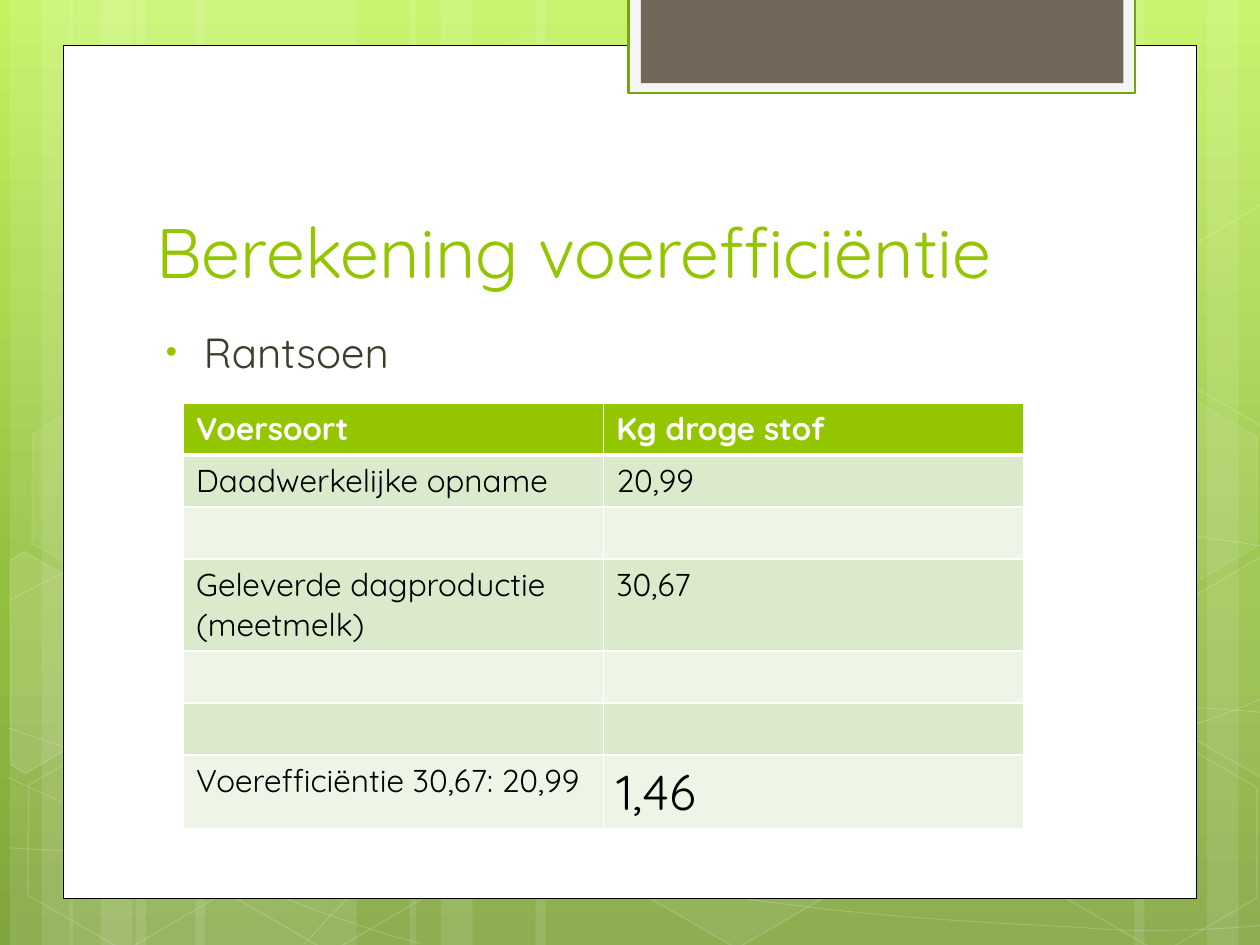
from copy import deepcopy

from lxml.etree import SubElement
from pptx import Presentation
from pptx.dml.color import RGBColor
from pptx.enum.shapes import MSO_SHAPE
from pptx.enum.text import MSO_ANCHOR, MSO_AUTO_SIZE, PP_ALIGN
from pptx.oxml.ns import qn
from pptx.util import Cm, Pt

FONT = "Quicksand"
WHITE = RGBColor(0xFF, 0xFF, 0xFF)
BLACK = RGBColor(0x00, 0x00, 0x00)
GREEN = RGBColor(0x94, 0xC6, 0x00)
DARK_GREEN = RGBColor(0x74, 0xA5, 0x10)
OLIVE = RGBColor(0x3E, 0x3D, 0x2D)
TAUPE = RGBColor(0x71, 0x68, 0x5A)
PALE_GREY = RGBColor(0xF5, 0xF5, 0xF5)
BAND_DARK = RGBColor(0xDC, 0xEA, 0xCC)
BAND_LIGHT = RGBColor(0xEE, 0xF5, 0xE7)
BACKGROUND_STOPS = [
    (0, RGBColor(0xC3, 0xF3, 0x5F)),
    (0.62, RGBColor(0x93, 0xBF, 0x3F)),
    (1, RGBColor(0x81, 0xA5, 0x3E)),
]

TITLE = "Berekening voerefficiëntie"
BULLET = "Rantsoen"
RESULT = "1,46"
ROWS = [
    ("Voersoort", "Kg droge stof"),
    ("Daadwerkelijke opname", "20,99"),
    ("", ""),
    ("Geleverde dagproductie (meetmelk)", "30,67"),
    ("", ""),
    ("", ""),
    ("Voerefficiëntie 30,67: 20,99", RESULT),
]

# All positions below are in centimetres.
SLIDE_WIDTH, SLIDE_HEIGHT = 25.4, 19.05
STRIPES = [  # left, width
    (2.74, 4.45), (0.2, 1.27), (0.84, 2.11), (3.94, 4.45), (1.4, 1.27), (2.03, 2.11),
    (18.62, 4.45), (24.33, 1.27), (22.86, 2.11), (10.8, 7.82), (8.26, 1.27), (8.89, 2.11),
]
HEXAGONS = [  # left, top, fill opacity, line opacity in percent
    (8.48, 0.91, 4, 8), (12.62, 14.96, 6, 12), (0.28, 15.01, 0, 12), (0.36, 7.92, 7, 8),
    (4.42, 15.04, 0, 12), (19.13, 11.51, 10, 12), (21.18, 15.06, 0, 12), (21.18, 7.98, 7, 8),
]
HEXAGON_TILT = 30
LEFT_CUT = [(0, 0.3), (0.15, 0), (2.41, 0), (3.5, 1.95), (2.41, 3.86), (2.06, 3.86)]
RIGHT_CUT = [(0, 1.93), (1.08, 0), (1.32, 0), (3.45, 3.68), (3.35, 3.86), (1.12, 3.86)]
CUT_HEXAGONS = [  # left, top, outline before tilting, fill opacity
    (-0.84, 11.66, LEFT_CUT, 10),
    (23.29, 11.28, RIGHT_CUT, 4),
    (23.29, 4.19, RIGHT_CUT, 0),
]
CURVES = [  # start point, then three Bézier points per segment
    [(0.18, 17.09), (1.55, 17.17), (2.92, 17.25), (4.83, 17.22), (6.73, 17.2), (9.09, 17.15),
     (11.63, 16.89), (14.17, 16.64), (17.78, 16.15), (20.12, 15.67), (22.43, 15.19),
     (24.82, 14.43), (25.58, 14)],
    [(0.18, 12.12), (0.91, 11.71), (1.65, 11.33), (3.07, 10.95), (4.52, 10.57), (6.58, 10.01),
     (8.81, 9.83), (11.07, 9.65), (13.82, 9.63), (16.61, 9.83), (19.41, 10.03),
     (24.05, 10.82), (25.58, 11.02)],
    [(0.15, 15.67), (3.23, 17.07), (6.27, 18.47), (8.48, 19.02)],
    [(0.18, 14.68), (0.97, 14.96), (1.78, 15.24), (3.25, 15.65), (4.72, 16.03), (6.93, 16.66),
     (9.07, 17.09), (11.18, 17.53), (13.84, 17.98), (15.95, 18.24), (18.06, 18.52),
     (20.32, 18.62), (21.67, 18.69), (22.99, 18.8), (23.34, 18.75), (24, 18.75),
     (24.66, 18.72), (25.12, 18.69), (25.58, 18.64)],
    [(6.15, 19.02), (6.6, 18.52), (7.06, 18.01), (7.67, 17.55), (8.28, 17.09), (9.14, 16.59),
     (9.86, 16.23), (10.57, 15.88), (11, 15.72), (11.94, 15.47), (12.85, 15.21),
     (14.55, 14.86), (15.44, 14.68), (16.36, 14.5), (16.48, 14.5), (17.27, 14.45),
     (18.06, 14.38), (19.3, 14.3), (20.17, 14.27), (21.06, 14.25), (22.5, 14.27),
     (22.5, 14.27), (23.07, 14.27), (23.64, 14.27), (24.21, 14.27), (24.66, 14.3),
     (25.1, 14.33), (25.32, 14.35), (25.55, 14.38), (25.48, 14.35), (25.55, 14.38)],
]
FRAMES = [  # box, fill, line colour, line width
    ((1.27, 0.91, 22.86, 17.2), WHITE, BLACK, 0.5),
    ((12.67, -0.05, 10.21, 1.93), PALE_GREY, DARK_GREEN, 1.25),
    ((12.92, -0.05, 9.73, 1.73), TAUPE, None, 0),
]
TITLE_BOX = (2.9, 2.84, 19.5, 3.18)
BODY_BOX = (2.88, 6.45, 18.82, 9.75)
TABLE_LEFT, TABLE_TOP, COLUMN_WIDTH = 3.7, 8.12, 8.47
TEXT_ROW_HEIGHT, EMPTY_ROW_HEIGHT = 1.04, 1.05


def set_opacity(solid_fill, percent):
    if percent < 100:
        SubElement(solid_fill[0], qn("a:alpha"), val=str(percent * 1000))


def paint(shape, fill=None, fill_opacity=100, line=None, line_width=0, line_opacity=100):
    shape.shadow.inherit = False
    properties = shape.element.spPr
    if fill is None or fill_opacity == 0:
        shape.fill.background()
    else:
        shape.fill.solid()
        shape.fill.fore_color.rgb = fill
        set_opacity(properties.find(qn("a:solidFill")), fill_opacity)
    if line is None:
        shape.line.fill.background()
    else:
        shape.line.color.rgb = line
        shape.line.width = Pt(line_width)
        set_opacity(properties.find(qn("a:ln")).find(qn("a:solidFill")), line_opacity)


def add_preset(slide, preset, box):
    return slide.shapes.add_shape(preset, *map(Cm, box))


def add_outline(slide, points, close):
    start, *others = [(Cm(x), Cm(y)) for x, y in points]
    builder = slide.shapes.build_freeform(*start)
    builder.add_line_segments(others, close=close)
    return builder.convert_to_shape()


def add_curve(slide, points):
    """Draw the points as an outline, then join every three into one Bézier segment."""
    curve = add_outline(slide, points, close=False)
    outline = next(curve.element.iter(qn("a:path")))
    lines = outline.findall(qn("a:lnTo"))
    for first in range(0, len(lines), 3):
        segment = SubElement(outline, qn("a:cubicBezTo"))
        for line in lines[first:first + 3]:
            segment.append(line[0])
            outline.remove(line)
    return curve


def add_background(slide):
    fill = slide.background.fill
    fill.gradient()
    fill.gradient_angle = 270
    stop_list = next(slide.background._cSld.iter(qn("a:gsLst")))
    stop_list.append(deepcopy(stop_list[-1]))
    for stop, (position, color) in zip(fill.gradient_stops, BACKGROUND_STOPS):
        stop.position = position
        stop.color.rgb = color


def add_decoration(slide):
    for left, width in STRIPES:
        stripe = add_preset(slide, MSO_SHAPE.RECTANGLE, (left, 0, width, SLIDE_HEIGHT))
        paint(stripe, WHITE, 10)
    for points in CURVES:
        paint(add_curve(slide, points), line=WHITE, line_width=0.5, line_opacity=20)
    for left, top, fill_opacity, line_opacity in HEXAGONS:
        hexagon = add_preset(slide, MSO_SHAPE.HEXAGON, (left, top, 4.45, 3.86))
        hexagon.adjustments[0] = 0.285
        hexagon.rotation = HEXAGON_TILT
        paint(hexagon, WHITE, fill_opacity, WHITE, 1, line_opacity)
    for left, top, outline, fill_opacity in CUT_HEXAGONS:
        hexagon = add_outline(slide, [(left + x, top + y) for x, y in outline], close=True)
        hexagon.rotation = HEXAGON_TILT
        paint(hexagon, WHITE, fill_opacity, WHITE, 1, 12)
    for box, fill, line, line_width in FRAMES:
        paint(add_preset(slide, MSO_SHAPE.RECTANGLE, box), fill, line=line, line_width=line_width)


def add_text(paragraph, text, size, color, bold=False):
    run = paragraph.add_run()
    run.text = text
    font = run.font
    font.name, font.size, font.bold, font.color.rgb = FONT, Pt(size), bold, color


def fill_placeholder(placeholder, box, anchor, text, size, color):
    """Place the placeholder in front of the decoration and return its paragraph."""
    placeholder.element.getparent().append(placeholder.element)
    placeholder.left, placeholder.top, placeholder.width, placeholder.height = map(Cm, box)
    frame = placeholder.text_frame
    frame.auto_size, frame.vertical_anchor = MSO_AUTO_SIZE.NONE, anchor
    paragraph = frame.paragraphs[0]
    paragraph.alignment = PP_ALIGN.LEFT
    add_text(paragraph, text, size, color)
    return paragraph


def add_bullet(paragraph):
    properties = paragraph._p.get_or_add_pPr()
    properties.set("marL", str(Cm(0.97)))
    properties.set("indent", str(Cm(-0.76)))
    SubElement(SubElement(properties, qn("a:buClr")), qn("a:srgbClr"), val=str(GREEN))
    SubElement(properties, qn("a:buSzPct"), val="76000")
    SubElement(properties, qn("a:buFont"), typeface="Arial")
    SubElement(properties, qn("a:buChar"), char="•")


def set_borders(cell, widths):
    properties = cell._tc.get_or_add_tcPr()
    for index, (side, width) in enumerate(widths.items()):
        border = SubElement(properties, qn(f"a:ln{side}"), w=str(Pt(width)))
        SubElement(SubElement(border, qn("a:solidFill")), qn("a:srgbClr"), val=str(WHITE))
        properties.insert(index, border)


def add_feed_table(slide):
    heights = [TEXT_ROW_HEIGHT if any(texts) else EMPTY_ROW_HEIGHT for texts in ROWS]
    table = slide.shapes.add_table(len(ROWS), 2, Cm(TABLE_LEFT), Cm(TABLE_TOP),
                                   Cm(2 * COLUMN_WIDTH), Cm(sum(heights))).table
    for row, texts in enumerate(ROWS):
        table.rows[row].height = Cm(heights[row])
        header = row == 0
        color = GREEN if header else BAND_DARK if row % 2 else BAND_LIGHT
        for column, text in enumerate(texts):
            cell = table.cell(row, column)
            cell.fill.solid()
            cell.fill.fore_color.rgb = color
            set_borders(cell, {"L": 1, "R": 1, "T": 3 if row == 1 else 1, "B": 3 if header else 1})
            if text:
                add_text(cell.text_frame.paragraphs[0], text, 28 if text == RESULT else 18,
                         WHITE if header else BLACK, header)


def main():
    presentation = Presentation()
    presentation.slide_width, presentation.slide_height = Cm(SLIDE_WIDTH), Cm(SLIDE_HEIGHT)
    slide = presentation.slides.add_slide(presentation.slide_layouts[1])
    add_background(slide)
    add_decoration(slide)
    title, body = slide.placeholders
    fill_placeholder(title, TITLE_BOX, MSO_ANCHOR.BOTTOM, TITLE, 40, GREEN)
    paragraph = fill_placeholder(body, BODY_BOX, MSO_ANCHOR.TOP, BULLET, 24, OLIVE)
    paragraph.space_before = Pt(5)
    add_bullet(paragraph)
    add_feed_table(slide)
    presentation.save("out.pptx")


if __name__ == "__main__":
    main()
